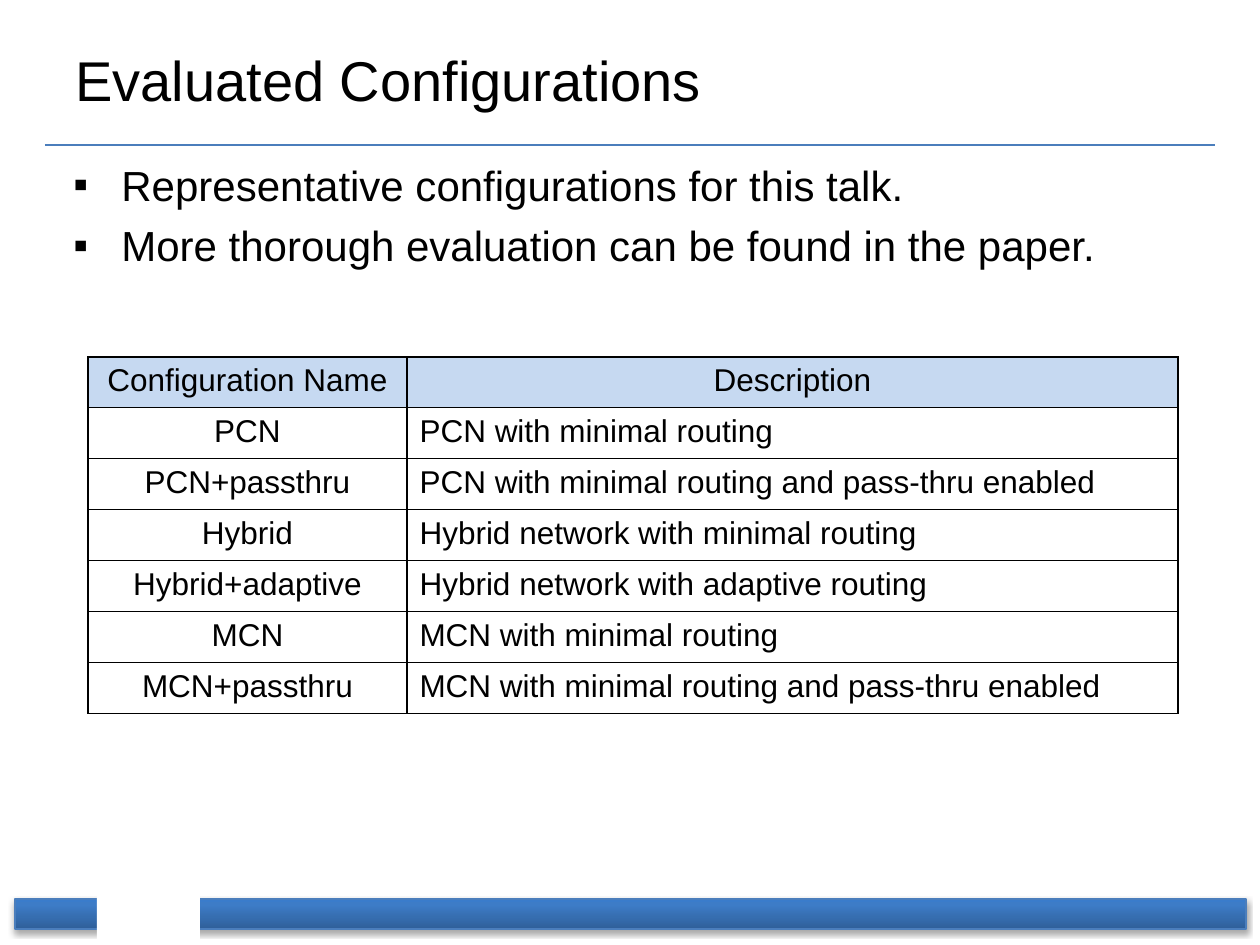
import pptx
import pptx.dml.color
import pptx.enum.shapes
import pptx.enum.text
import pptx.oxml
import pptx.oxml.ns
import pptx.util

RGBColor = pptx.dml.color.RGBColor
Align = pptx.enum.text.PP_ALIGN
Anchor = pptx.enum.text.MSO_ANCHOR

BLACK = RGBColor(0x00, 0x00, 0x00)
WHITE = RGBColor(0xFF, 0xFF, 0xFF)
RULE_BLUE = RGBColor(0x4B, 0x7E, 0xBC)
HEADER_BLUE = RGBColor(0xC6, 0xD9, 0xF1)
BAR_STOPS = [
    (0, RGBColor(0x2F, 0x5F, 0x99)),
    (80, RGBColor(0x3D, 0x7C, 0xC7)),
    (100, RGBColor(0x3A, 0x7C, 0xCB)),
]
PX_PER_INCH = 126

CONFIGURATIONS = [
    ("Configuration Name", "Description"),
    ("PCN", "PCN with minimal routing"),
    ("PCN+passthru", "PCN with minimal routing and pass-thru enabled"),
    ("Hybrid", "Hybrid network with minimal routing"),
    ("Hybrid+adaptive", "Hybrid network with adaptive routing"),
    ("MCN", "MCN with minimal routing"),
    ("MCN+passthru", "MCN with minimal routing and pass-thru enabled"),
]


def px(length):
    return pptx.util.Emu(round(length * pptx.util.Inches(1) / PX_PER_INCH))


def element(markup):
    """Parse markup whose root is a DrawingML element."""
    namespace = pptx.oxml.ns.nsdecls("a")
    tag, rest = markup.split(">", 1)
    if tag.endswith("/"):
        return pptx.oxml.parse_xml(f"{tag[:-1]} {namespace}/>{rest}")
    return pptx.oxml.parse_xml(f"{tag} {namespace}>{rest}")


class SlideWriter:
    def __init__(self, page, font="Arial"):
        self.page = page
        self.font = font

    def style(self, para, size, align=Align.LEFT):
        para.alignment = align
        for span in para.runs:
            span.font.name = self.font
            span.font.size = pptx.util.Pt(size)
            span.font.color.rgb = BLACK

    def rectangle(self, left, top, width, height, color):
        shape = self.page.shapes.add_shape(
            pptx.enum.shapes.MSO_SHAPE.RECTANGLE, px(left), px(top), px(width), px(height))
        shape.shadow.inherit = False
        shape.fill.solid()
        shape.fill.fore_color.rgb = color
        shape.line.fill.background()
        return shape

    def gradient_bar(self, left, top, width, height, stops):
        """Draw a bar shaded from bottom to top, with a soft shadow below."""
        bar = self.rectangle(left, top, width, height, WHITE)
        bar.line.color.rgb = RULE_BLUE
        bar.line.width = pptx.util.Pt(0.75)
        marks = "".join(
            f'<a:gs pos="{percent * 1000}"><a:srgbClr val="{color}"/></a:gs>'
            for percent, color in stops)
        properties = bar.element.spPr
        solid = properties.find(pptx.oxml.ns.qn("a:solidFill"))
        properties.replace(solid, element(
            f'<a:gradFill rotWithShape="1"><a:gsLst>{marks}</a:gsLst>'
            '<a:lin ang="16200000" scaled="0"/></a:gradFill>'))
        effects = properties.find(pptx.oxml.ns.qn("a:effectLst"))
        effects.append(element(
            '<a:outerShdw blurRad="40000" dist="23000" dir="5400000" rotWithShape="0">'
            '<a:srgbClr val="000000"><a:alpha val="35000"/></a:srgbClr></a:outerShdw>'))

    def rule(self, left, right, y):
        line = self.page.shapes.add_connector(
            pptx.enum.shapes.MSO_CONNECTOR.STRAIGHT, px(left), px(y), px(right), px(y))
        line.line.color.rgb = RULE_BLUE
        line.line.width = pptx.util.Pt(0.75)
        line.element.spPr.append(element("<a:effectLst/>"))

    def text_box(self, left, top, width, height, text, size, anchor=Anchor.TOP):
        box = self.page.shapes.add_textbox(px(left), px(top), px(width), px(height))
        frame = box.text_frame
        frame.word_wrap = True
        frame.vertical_anchor = anchor
        frame.text = text
        for para in frame.paragraphs:
            self.style(para, size)
        return frame

    def bullet_list(self, left, top, width, height, items, size, indent):
        frame = self.text_box(left, top, width, height, "\n".join(items), size)
        frame.margin_top = px(12)
        for index, para in enumerate(frame.paragraphs):
            properties = para._p.get_or_add_pPr()
            properties.set("marL", str(px(indent)))
            properties.set("indent", str(-px(indent)))
            properties.append(element('<a:buFont typeface="Arial"/>'))
            properties.append(element('<a:buChar char="▪"/>'))
            para.space_before = pptx.util.Pt(6 if index else 0)

    def border(self, cell):
        properties = cell._tc.get_or_add_tcPr()
        for index, side in enumerate(("lnL", "lnR", "lnT", "lnB")):
            properties.insert(index, element(
                f'<a:{side} w="12700"><a:solidFill><a:srgbClr val="{BLACK}"/>'
                f'</a:solidFill></a:{side}>'))

    def table(self, left, top, widths, heights, rows, size):
        grid = self.page.shapes.add_table(
            len(rows), len(widths), px(left), px(top), px(sum(widths)), px(sum(heights))).table
        for column, width in zip(grid.columns, widths):
            column.width = px(width)
        for r, (row, height) in enumerate(zip(rows, heights)):
            grid.rows[r].height = px(height)
            for c, text in enumerate(row):
                cell = grid.cell(r, c)
                cell.text_frame.text = text
                centred = r == 0 or c == 0
                self.style(cell.text_frame.paragraphs[0], size,
                           Align.CENTER if centred else Align.LEFT)
                cell.fill.solid()
                cell.fill.fore_color.rgb = WHITE if r else HEADER_BLUE
                self.border(cell)


def main():
    deck = pptx.Presentation()
    deck.slide_width = px(1260)
    deck.slide_height = px(945)
    writer = SlideWriter(deck.slides.add_slide(deck.slide_layouts[6]))

    writer.gradient_bar(15, 899, 1231, 30, BAR_STOPS)
    writer.rule(45, 1215, 145)
    writer.rectangle(97, 889, 103, 50, WHITE)
    writer.text_box(63, 16, 1134, 127, "Evaluated Configurations", 32, Anchor.MIDDLE)
    writer.table(88, 357, [319, 771], [48] + [51] * 6, CONFIGURATIONS, 18)
    writer.bullet_list(61, 147, 1134, 714, [
        "Representative configurations for this talk.",
        "More thorough evaluation can be found in the paper.",
    ], 24, indent=48)

    deck.save("out.pptx")


if __name__ == "__main__":
    main()
